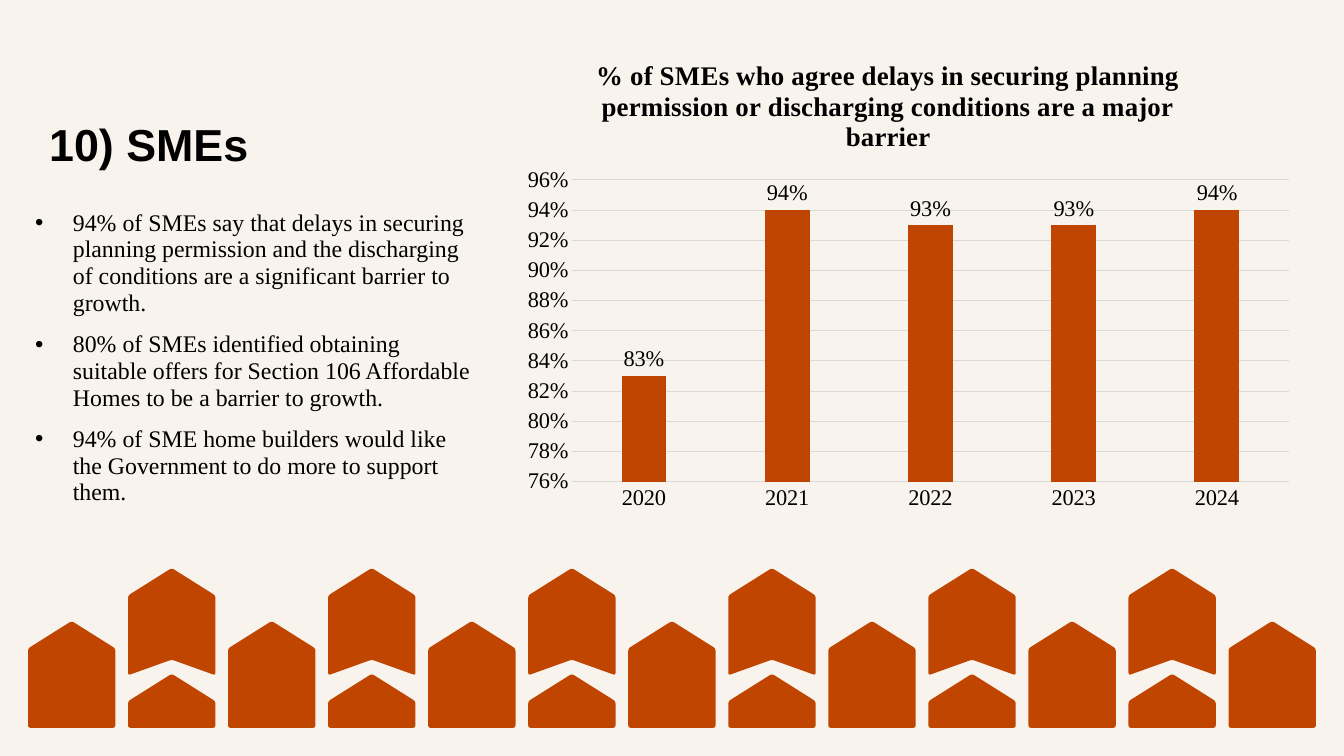
from dataclasses import dataclass

from lxml import etree
from pptx import Presentation
from pptx.chart.data import CategoryChartData
from pptx.dml.color import RGBColor
from pptx.enum.chart import XL_CHART_TYPE, XL_LABEL_POSITION, XL_TICK_MARK
from pptx.enum.text import MSO_ANCHOR
from pptx.oxml import parse_xml
from pptx.oxml.ns import nsdecls, qn
from pptx.util import Pt

COLUMNS = XL_CHART_TYPE.COLUMN_CLUSTERED
NO_TICK = XL_TICK_MARK.NONE
OUTSIDE_END = XL_LABEL_POSITION.OUTSIDE_END
TOP = MSO_ANCHOR.TOP


@dataclass(frozen=True)
class Theme:
    background: RGBColor = RGBColor.from_string("F9F3ED")
    brick: RGBColor = RGBColor.from_string("C04500")
    ink: RGBColor = RGBColor.from_string("000000")
    grid: RGBColor = RGBColor.from_string("D9D9D9")
    heading_font: str = "Arial"
    body_font: str = "Times New Roman"
    heading_size: float = 32
    body_size: float = 17
    chart_size: float = 16
    chart_title_size: float = 19.2


THEME = Theme()

HEADING = "10) SMEs"
POINTS = (
    "94% of SMEs say that delays in securing planning permission and the "
    "discharging of conditions are a significant barrier to growth.",
    "80% of SMEs identified obtaining suitable offers for Section 106 "
    "Affordable Homes to be a barrier to growth.",
    "94% of SME home builders would like the Government to do more to support them.",
)
CHART_TITLE = ("% of SMEs who agree delays in securing planning permission or "
               "discharging conditions are a major barrier")
SHARES = {"2020": 0.83, "2021": 0.94, "2022": 0.93, "2023": 0.93, "2024": 0.94}

HOUSE_COUNT = 13
HOUSE_LEFT = 20
HOUSE_PITCH = 71.46
HOUSE_WIDTH = 62.4
ROOF_HEIGHT = 19.6
GROUND = 519.9
CORNER = 2


def style_font(font, size, name=THEME.body_font, bold=False):
    font.size = Pt(size)
    font.name = name
    font.bold = bold
    font.color.rgb = THEME.ink


def add_text_box(page, left, top, width, height, top_inset=3.6):
    box = page.shapes.add_textbox(Pt(left), Pt(top), Pt(width), Pt(height))
    frame = box.text_frame
    frame.word_wrap = True
    frame.vertical_anchor = TOP
    frame.margin_top = Pt(top_inset)
    return frame


def add_heading(page):
    frame = add_text_box(page, 28, 75.6, 777, 42.5, top_inset=7.6)
    para = frame.paragraphs[0]
    para.text = HEADING
    style_font(para.font, THEME.heading_size, THEME.heading_font, bold=True)


def add_bullet(para, indent):
    properties = para._p.get_or_add_pPr()
    properties.set("marL", str(Pt(indent)))
    properties.set("indent", str(-Pt(indent)))
    etree.SubElement(properties, qn("a:buFont"), typeface=THEME.heading_font)
    etree.SubElement(properties, qn("a:buChar"), char="•")


def add_points(page):
    frame = add_text_box(page, 18, 146.2, 328.3, 226)
    for index, text in enumerate(POINTS):
        para = frame.add_paragraph() if index else frame.paragraphs[0]
        para.text = text
        add_bullet(para, 27)
        para.line_spacing = 0.94
        if index:
            para.space_before = Pt(10)
        style_font(para.font, THEME.body_size)


def set_layout(element, inner=False, **fractions):
    """Place a chart title or plot area by fractions of the chart's size."""
    for old in element.findall(qn("c:layout")):
        element.remove(old)
    target = '<c:layoutTarget val="inner"/>' if inner else ""
    modes = "".join(f'<c:{key}Mode val="edge"/>' for key in ("x", "y"))
    values = "".join(f'<c:{key} val="{value}"/>' for key, value in fractions.items())
    layout = parse_xml(f'<c:layout {nsdecls("c")}><c:manualLayout>{target}{modes}'
                       f'{values}</c:manualLayout></c:layout>')
    text = element.find(qn("c:tx"))
    if text is None:
        element.insert(0, layout)
    else:
        text.addnext(layout)


def style_axes(chart):
    for axis in (chart.category_axis, chart.value_axis):
        axis.major_tick_mark = axis.minor_tick_mark = NO_TICK
        style_font(axis.tick_labels.font, THEME.chart_size)
    chart.category_axis.format.line.color.rgb = THEME.grid
    chart.category_axis.format.line.width = Pt(0.75)
    shares = chart.value_axis
    shares.minimum_scale, shares.maximum_scale, shares.major_unit = 0.76, 0.96, 0.02
    shares.tick_labels.number_format = "0%"
    shares.tick_labels.number_format_is_linked = False
    shares.format.line.fill.background()
    shares.major_gridlines.format.line.color.rgb = THEME.grid
    shares.major_gridlines.format.line.width = Pt(0.75)


def add_share_chart(page):
    data = CategoryChartData(number_format="0%")
    data.categories = SHARES.keys()
    data.add_series("Series 1", SHARES.values())
    chart = page.shapes.add_chart(
        COLUMNS, Pt(365.8), Pt(24.5), Pt(566), Pt(347), data).chart
    style_font(chart.font, THEME.chart_size)
    chart.has_legend = False

    title = chart.chart_title
    title.text_frame.text = CHART_TITLE
    style_font(title.text_frame.paragraphs[0].font, THEME.chart_title_size, bold=True)
    title.include_in_layout = False
    set_layout(title._element, x=0.1, y=0.04)
    set_layout(chart._chartSpace.chart.plotArea, inner=True, x=0.076, y=0.3, w=0.904, h=0.621)
    style_axes(chart)

    plot = chart.plots[0]
    plot.gap_width = 219
    plot.overlap = -27
    plot.vary_by_categories = False
    plot.series[0].format.fill.solid()
    plot.series[0].format.fill.fore_color.rgb = THEME.brick
    plot.has_data_labels = True
    labels = plot.data_labels
    labels.show_value = True
    labels.number_format = "0%"
    labels.number_format_is_linked = False
    labels.position = OUTSIDE_END
    style_font(labels.font, THEME.chart_size)


def toward(start, end, distance):
    dx, dy = end[0] - start[0], end[1] - start[1]
    share = distance / (dx * dx + dy * dy) ** 0.5
    return start[0] + dx * share, start[1] + dy * share


def round_corners(corners):
    """Replace each corner with a short quadratic curve of five points."""
    points = []
    for index, corner in enumerate(corners):
        first = toward(corner, corners[index - 1], CORNER)
        last = toward(corner, corners[(index + 1) % len(corners)], CORNER)
        for t in (0, 0.25, 0.5, 0.75, 1):
            points.append(tuple((1 - t) ** 2 * a + 2 * t * (1 - t) * b + t * t * c
                                for a, b, c in zip(first, corner, last)))
    return [(Pt(x), Pt(y)) for x, y in points]


def add_house(page, left, top, bottom, notch=0):
    """Draw a gabled block; notch is how far its base rises in the middle."""
    middle, right, eave = left + HOUSE_WIDTH / 2, left + HOUSE_WIDTH, top + ROOF_HEIGHT
    corners = [(left, bottom), (left, eave), (middle, top), (right, eave), (right, bottom)]
    if notch:
        corners.append((middle, bottom - notch))
    points = round_corners(corners)
    builder = page.shapes.build_freeform(*points[0])
    builder.add_line_segments(points[1:], close=True)
    house = builder.convert_to_shape()
    house.shadow.inherit = False
    house.fill.solid()
    house.fill.fore_color.rgb = THEME.brick
    house.line.fill.background()


def add_street(page):
    for index in range(HOUSE_COUNT):
        left = HOUSE_LEFT + index * HOUSE_PITCH
        if index % 2:
            add_house(page, left, 405.8, 482.4, notch=11.2)
            add_house(page, left, 481.3, GROUND)
        else:
            add_house(page, left, 443.6, GROUND)


def main():
    deck = Presentation()
    deck.slide_width, deck.slide_height = Pt(960), Pt(540)
    page = deck.slides.add_slide(deck.slide_layouts[6])
    page.background.fill.solid()
    page.background.fill.fore_color.rgb = THEME.background
    add_street(page)
    add_heading(page)
    add_points(page)
    add_share_chart(page)
    deck.save("out.pptx")


if __name__ == "__main__":
    main()
